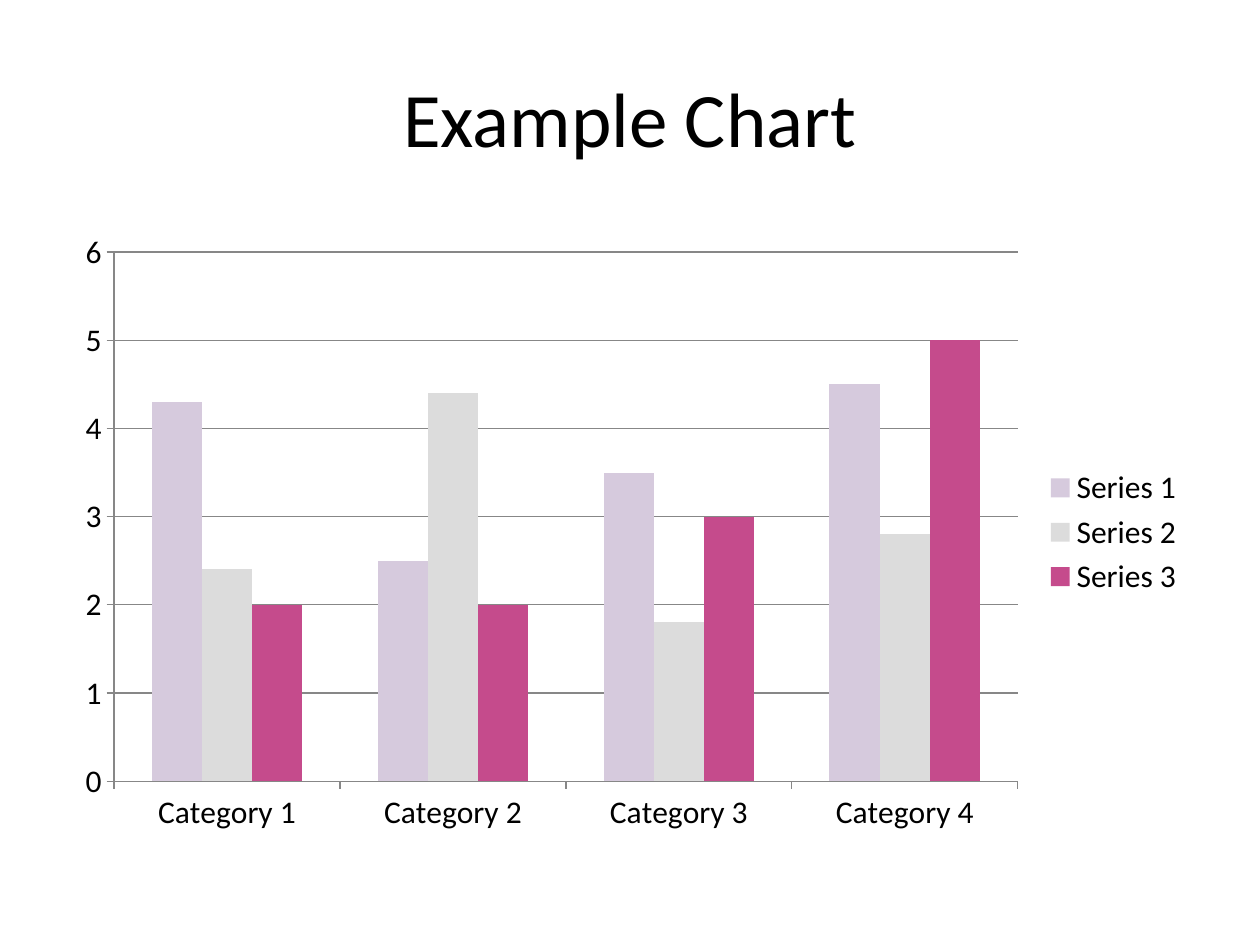
from pptx import Presentation
from pptx.chart.data import CategoryChartData
from pptx.dml.color import RGBColor
from pptx.enum.chart import XL_CHART_TYPE, XL_LEGEND_POSITION, XL_TICK_MARK
from pptx.enum.text import MSO_ANCHOR, PP_ALIGN
from pptx.util import Pt

# Content
TITLE = "Example Chart"
CATEGORIES = ["Category 1", "Category 2", "Category 3", "Category 4"]
SERIES = [
    ("Series 1", (4.3, 2.5, 3.5, 4.5), "D6CADD"),
    ("Series 2", (2.4, 4.4, 1.8, 2.8), "DCDCDC"),
    ("Series 3", (2, 2, 3, 5), "C54B8C"),
]

# Layout and formats
SLIDE_W, SLIDE_H = 720, 540
MARGIN = 36
BODY_W = SLIDE_W - 2 * MARGIN
TITLE_TOP, TITLE_H = 21.6, 90
CHART_TOP, CHART_H = 126, 356.4
TITLE_FONT = {"name": "Calibri", "size": Pt(44), "bold": False}
CHART_FONT = {"name": "Calibri", "size": Pt(18), "bold": False}
TEXT, LINE = "000000", "878787"


def rgb(code):
    return RGBColor.from_string(code)


def set_font(font, formats):
    for name, value in formats.items():
        setattr(font, name, value)
    font.color.rgb = rgb(TEXT)


def set_line(line):
    line.color.rgb = rgb(LINE)
    line.width = Pt(0.75)


def add_title(s):
    sp = s.shapes.title
    sp.left, sp.top = Pt(MARGIN), Pt(TITLE_TOP)
    sp.width, sp.height = Pt(BODY_W), Pt(TITLE_H)
    tf = sp.text_frame
    tf.text = TITLE
    tf.vertical_anchor = MSO_ANCHOR.MIDDLE
    p = tf.paragraphs[0]
    p.alignment = PP_ALIGN.CENTER
    set_font(p.runs[0].font, TITLE_FONT)


def add_column_chart(s):
    data = CategoryChartData()
    data.categories = CATEGORIES
    for name, values, _ in SERIES:
        data.add_series(name, values)
    chart = s.shapes.add_chart(
        XL_CHART_TYPE.COLUMN_CLUSTERED, Pt(MARGIN), Pt(CHART_TOP),
        Pt(BODY_W), Pt(CHART_H), data).chart
    chart.has_title = False
    set_font(chart.font, CHART_FONT)

    # Columns
    plot = chart.plots[0]
    plot.gap_width, plot.overlap = 150, 0
    plot.vary_by_categories = False
    for series, (_, _, color) in zip(plot.series, SERIES):
        series.format.fill.solid()
        series.format.fill.fore_color.rgb = rgb(color)

    # Axes and gridlines
    for axis in (chart.category_axis, chart.value_axis):
        axis.major_tick_mark = XL_TICK_MARK.OUTSIDE
        axis.minor_tick_mark = XL_TICK_MARK.NONE
        set_line(axis.format.line)
    axis = chart.value_axis
    axis.minimum_scale, axis.maximum_scale, axis.major_unit = 0, 6, 1
    axis.has_major_gridlines = True
    set_line(axis.major_gridlines.format.line)

    # Legend
    chart.has_legend = True
    chart.legend.position = XL_LEGEND_POSITION.RIGHT
    chart.legend.include_in_layout = False


def main():
    prs = Presentation()
    prs.slide_width, prs.slide_height = Pt(SLIDE_W), Pt(SLIDE_H)
    s = prs.slides.add_slide(prs.slide_layouts.get_by_name("Title Only"))
    add_title(s)
    add_column_chart(s)
    prs.save("out.pptx")


if __name__ == "__main__":
    main()
